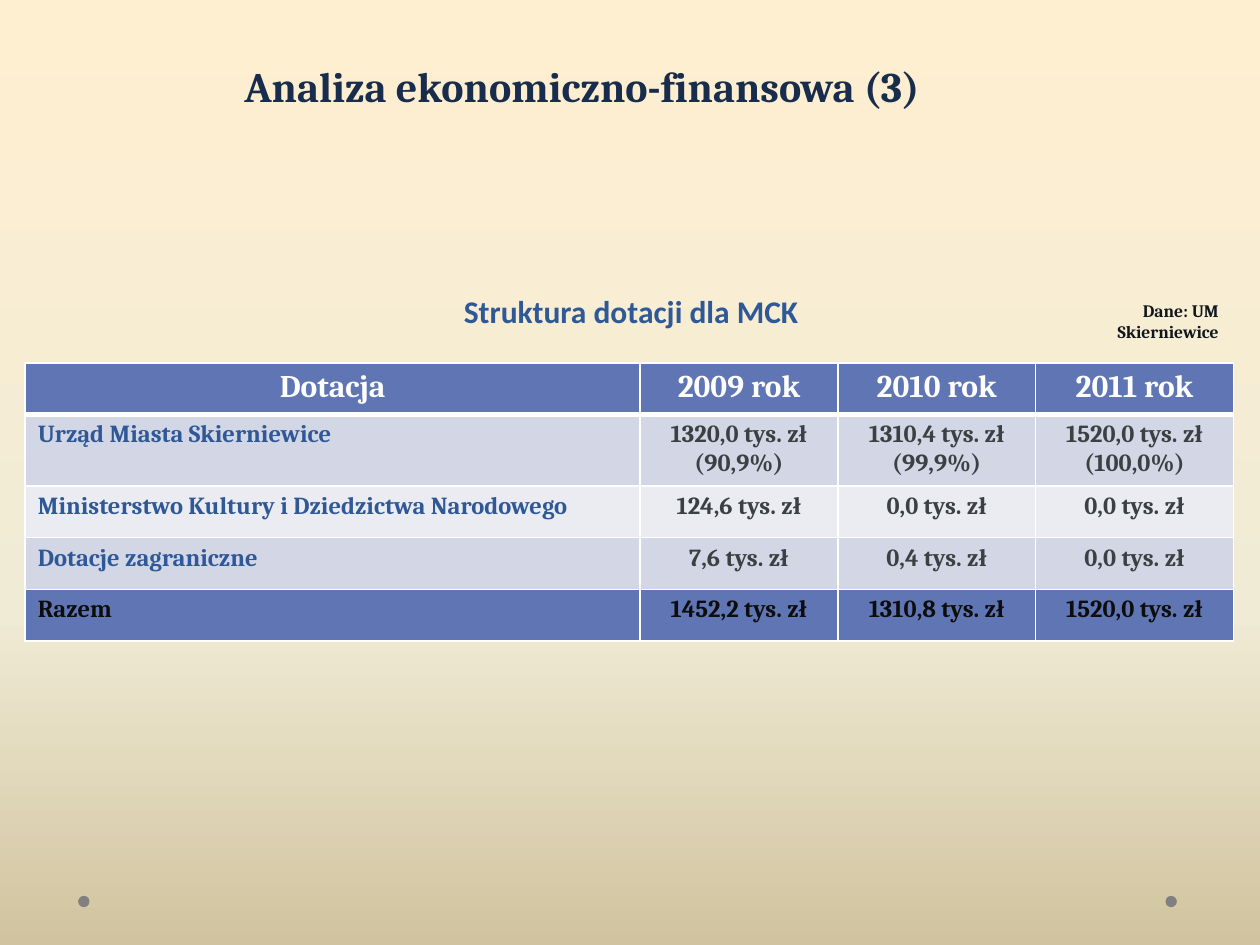
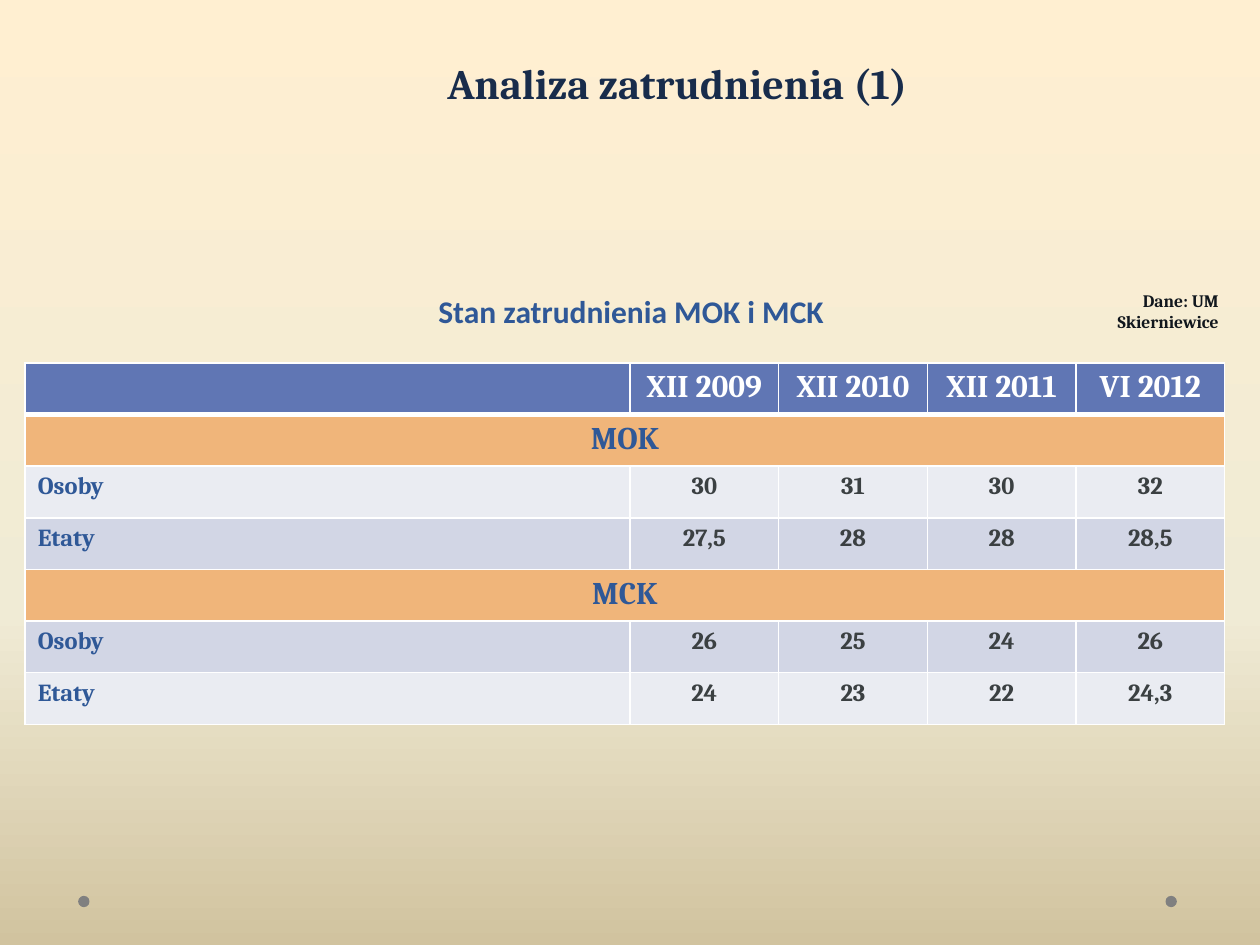
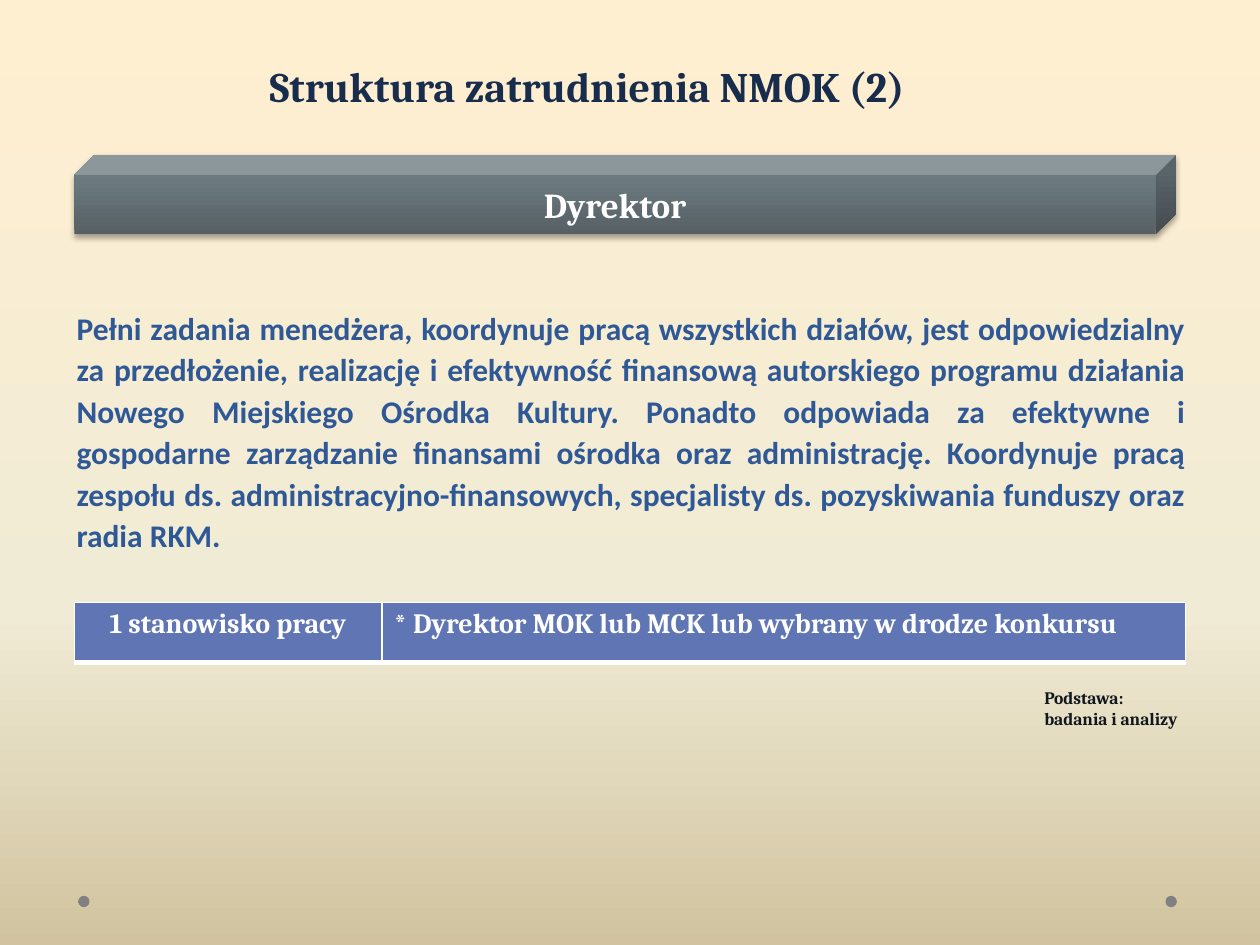
import pptx
import pptx.util
import pptx.dml.color
import pptx.enum.shapes
import pptx.enum.text
import pptx.oxml.ns
import lxml.etree

Inches = pptx.util.Inches
Pt = pptx.util.Pt
qn = pptx.oxml.ns.qn
ALIGN = pptx.enum.text.PP_ALIGN
ANCHOR = pptx.enum.text.MSO_ANCHOR
SHAPE = pptx.enum.shapes.MSO_SHAPE

NAVY, BLUE, INK, BLACK = "182C4B", "2F5897", "3B4042", "0D0D0D"
NOTE, WHITE, GREY = "11171D", "FFFFFF", "808080"
HEADER, BAND_ODD, BAND_EVEN, SECTION = "6076B4", "D2D6E5", "EAECF2", "F0B57A"
SERIF, SANS = "Cambria", "Calibri"
BACKGROUND = [(0, "FFEFD1"), (65, "F0EBD5"), (100, "D1C39F")]
STEEL = [(0, "566065"), (80, "6F7D83"), (100, "6F7E84")]

GRANTS = [
    ["Dotacja", "2009 rok", "2010 rok", "2011 rok"],
    ["Urząd Miasta Skierniewice", "1320,0 tys. zł\n(90,9%)",
     "1310,4 tys. zł\n(99,9%)", "1520,0 tys. zł\n(100,0%)"],
    ["Ministerstwo Kultury i Dziedzictwa Narodowego",
     "124,6 tys. zł", "0,0 tys. zł", "0,0 tys. zł"],
    ["Dotacje zagraniczne", "7,6 tys. zł", "0,4 tys. zł", "0,0 tys. zł"],
    ["Razem", "1452,2 tys. zł", "1310,8 tys. zł", "1520,0 tys. zł"],
]
STAFF = [
    ["", "XII 2009", "XII 2010", "XII 2011", "VI 2012"],
    ["MOK"],
    ["Osoby", "30", "31", "30", "32"],
    ["Etaty", "27,5", "28", "28", "28,5"],
    ["MCK"],
    ["Osoby", "26", "25", "24", "26"],
    ["Etaty", "24", "23", "22", "24,3"],
]
POSITION = [["1 stanowisko pracy",
             "* Dyrektor MOK lub MCK lub wybrany w drodze konkursu"]]
DUTIES = (
    "Pełni zadania menedżera, koordynuje pracą wszystkich działów, jest "
    "odpowiedzialny za przedłożenie, realizację i efektywność finansową "
    "autorskiego programu działania Nowego Miejskiego Ośrodka Kultury. Ponadto "
    "odpowiada za efektywne i gospodarne zarządzanie finansami ośrodka oraz "
    "administrację. Koordynuje pracą zespołu ds. administracyjno-finansowych, "
    "specjalisty ds. pozyskiwania funduszy oraz radia RKM."
)


def rgb(value):
    return pptx.dml.color.RGBColor.from_string(value)


def inches(*values):
    return [Inches(v) for v in values]


def set_gradient(fill, element, stops, angle):
    fill.gradient()
    fill.gradient_angle = angle
    gs_list = element.find(".//" + qn("a:gsLst"))
    for gs in list(gs_list):
        gs_list.remove(gs)
    for position, color in stops:
        gs = lxml.etree.SubElement(gs_list, qn("a:gs"), pos=str(position * 1000))
        lxml.etree.SubElement(gs, qn("a:srgbClr"), val=color)


def write(tf, text, size, color, font=SERIF, align=ALIGN.LEFT, spacing=None):
    for i, line in enumerate(text.split("\n")):
        p = tf.add_paragraph() if i else tf.paragraphs[0]
        p.alignment = align
        if spacing:
            p.line_spacing = spacing
        if line:
            r = p.add_run()
            r.text = line
            r.font.size = Pt(size)
            r.font.name = font
            r.font.bold = True
            r.font.color.rgb = rgb(color)


def add_text(slide, box, text, size, color, anchor=ANCHOR.TOP, **style):
    tf = slide.shapes.add_textbox(*inches(*box)).text_frame
    tf.word_wrap = True
    tf.vertical_anchor = anchor
    write(tf, text, size, color, **style)


def add_note(slide, x, y, text, align=ALIGN.LEFT):
    add_text(slide, (x, y, 1.54, 0.44), text, 10, NOTE, align=align)


def add_subtitle(slide, text):
    add_text(slide, (0.51, 2.27, 9, 0.4), text, 18, BLUE, ANCHOR.MIDDLE,
             font=SANS, align=ALIGN.CENTER)


def add_dots(slide):
    for x in (0.62, 9.25):
        sp = slide.shapes.add_shape(SHAPE.OVAL, *inches(x, 7.11, 0.09, 0.09))
        sp.shadow.inherit = False
        sp.fill.solid()
        sp.fill.fore_color.rgb = rgb(GREY)
        sp.line.fill.background()


def new_slide(prs, title, indent, top=-0.03):
    slide = prs.slides.add_slide(prs.slide_layouts[5])
    add_dots(slide)
    sp = slide.shapes.title
    sp.left, sp.top, sp.width, sp.height = inches(0.59, top, 9, 0.96)
    tf = sp.text_frame
    tf.auto_size = pptx.enum.text.MSO_AUTO_SIZE.NONE
    tf.vertical_anchor = ANCHOR.BOTTOM
    tf.margin_left = Inches(indent)
    write(tf, title, 24, NAVY, spacing=Pt(58))
    return slide


def set_borders(cell, top, bottom):
    tc_pr = cell._tc.get_or_add_tcPr()
    sides = [("a:lnL", 1), ("a:lnR", 1), ("a:lnT", top), ("a:lnB", bottom)]
    for i, (tag, width) in enumerate(sides):
        ln = lxml.etree.Element(qn(tag), w=str(Pt(width)))
        fill = lxml.etree.SubElement(ln, qn("a:solidFill"))
        lxml.etree.SubElement(fill, qn("a:srgbClr"), val=WHITE)
        tc_pr.insert(i, ln)


def row_style(index, row, header_size):
    if index == 0:
        return HEADER, header_size, WHITE, WHITE
    if len(row) == 1:
        return SECTION, 18, BLUE, BLUE
    if row[0] == "Razem":
        return HEADER, 14, BLACK, BLACK
    return (BAND_ODD if index % 2 else BAND_EVEN), 14, BLUE, INK


def add_grid(slide, x, y, widths, row_height, rows, header_size=18, centered=None):
    box = inches(x, y, sum(widths), row_height * len(rows))
    table = slide.shapes.add_table(len(rows), len(widths), *box).table
    table.horz_banding = False
    for column, width in zip(table.columns, widths):
        column.width = Inches(width)
    for i, row in enumerate(rows):
        table.rows[i].height = Inches(row_height)
        fill, size, label_color, value_color = row_style(i, row, header_size)
        if len(row) == 1:
            table.cell(i, 0).merge(table.cell(i, len(widths) - 1))
        for j in range(len(widths)):
            cell = table.cell(i, j)
            cell.fill.solid()
            cell.fill.fore_color.rgb = rgb(fill)
            set_borders(cell, 3 if i == 1 else 1, 3 if i == 0 else 1)
            if j < len(row):
                if centered is None:
                    center = j > 0 or i == 0 or len(row) == 1
                else:
                    center = j in centered
                write(cell.text_frame, row[j], size,
                      value_color if j else label_color,
                      align=ALIGN.CENTER if center else ALIGN.LEFT)


def add_role_bar(slide, box, text):
    sp = slide.shapes.add_shape(SHAPE.CUBE, *inches(*box))
    set_gradient(sp.fill, sp.element, STEEL, 90)
    sp.line.fill.background()
    sp.shadow.inherit = False
    effects = sp.element.spPr.find(qn("a:effectLst"))
    shadow = lxml.etree.SubElement(
        effects, qn("a:outerShdw"), blurRad=str(Pt(3.1)), dist=str(Pt(1.8)),
        dir="5400000", rotWithShape="0")
    color = lxml.etree.SubElement(shadow, qn("a:srgbClr"), val="000000")
    lxml.etree.SubElement(color, qn("a:alpha"), val="35000")
    sp.text_frame.vertical_anchor = ANCHOR.MIDDLE
    write(sp.text_frame, text, 20, WHITE, align=ALIGN.CENTER)


def table_slide(prs, title, indent, top, subtitle, note_top, widths, rows):
    slide = new_slide(prs, title, indent, top)
    add_subtitle(slide, subtitle)
    add_note(slide, 8.23, note_top, "Dane: UM Skierniewice", ALIGN.RIGHT)
    add_grid(slide, 0.2, 2.88, widths, 0.41, rows)


def role_slide(prs):
    slide = new_slide(prs, "Struktura zatrudnienia NMOK (2)", 1.55)
    add_text(slide, (0.51, 2.37, 9, 2.1), DUTIES, 18, BLUE,
             font=SANS, align=ALIGN.JUSTIFY, spacing=1.1)
    add_role_bar(slide, (0.59, 1.23, 8.74, 0.63), "Dyrektor")
    add_grid(slide, 0.59, 4.78, [2.44, 6.38], 0.48, POSITION, 16, centered=[0])
    add_note(slide, 8.19, 5.4, "Podstawa:\nbadania i analizy")


def main():
    prs = pptx.Presentation()
    prs.slide_width, prs.slide_height = inches(10, 7.5)
    master = prs.slide_master
    set_gradient(master.background.fill, master.element, BACKGROUND, 270)
    table_slide(prs, "Analiza ekonomiczno-finansowa (3)", 1.35, -0.03,
                "Struktura dotacji dla MCK", 2.33, [4.88] + [1.57] * 3, GRANTS)
    table_slide(prs, "Analiza zatrudnienia (1)", 2.96, -0.05,
                "Stan zatrudnienia MOK i MCK", 2.25, [4.8] + [1.18] * 4, STAFF)
    role_slide(prs)
    prs.save("out.pptx")


if __name__ == "__main__":
    main()
